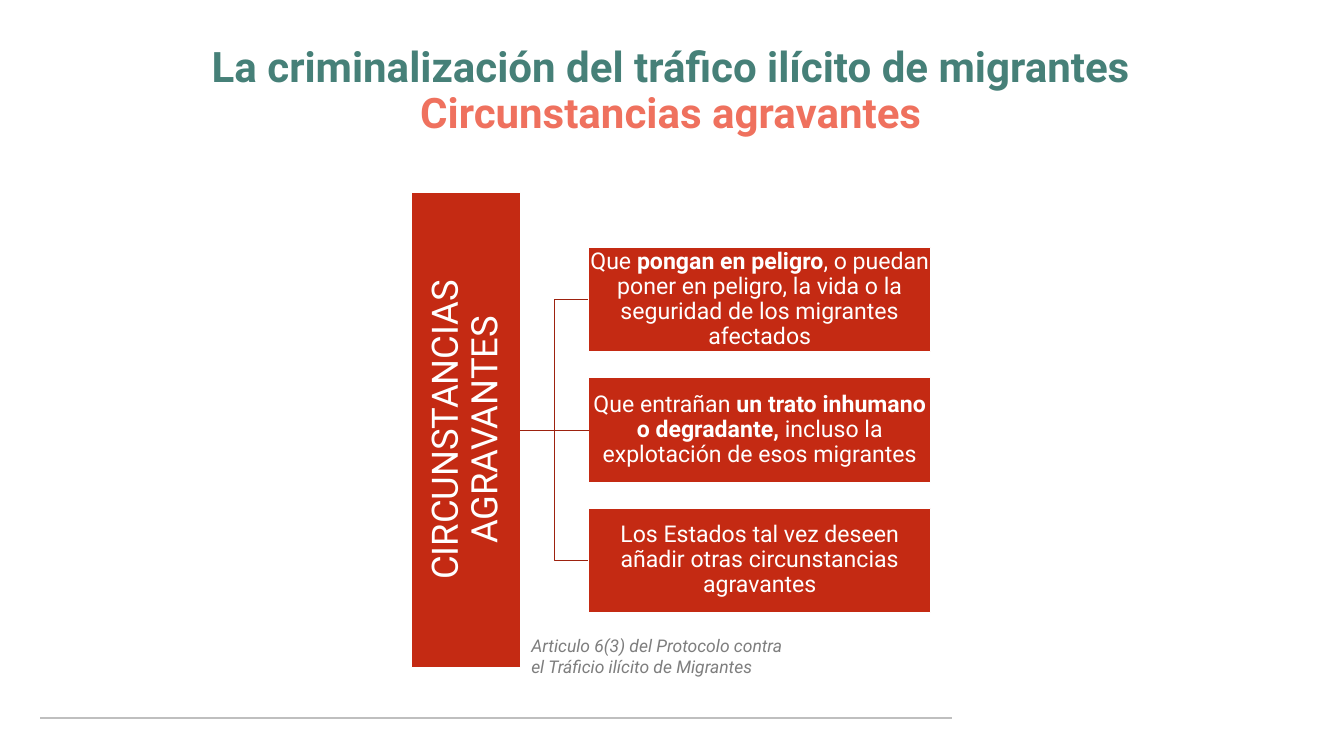
from pptx import Presentation
from pptx.dml.color import RGBColor
from pptx.enum.shapes import MSO_CONNECTOR as Connector, MSO_SHAPE as Shape
from pptx.enum.text import MSO_ANCHOR as Anchor, MSO_AUTO_SIZE as AutoSize, PP_ALIGN as Align
from pptx.oxml.ns import qn
from pptx.util import Inches, Pt
from lxml import etree

FONT = "Roboto"
RED, DARK_RED, WHITE = "C42A13", "9D220F", "FFFFFF"
GREEN, CORAL, GREY, RULE_GREY = "468078", "EF715E", "7E7E7E", "BFBFBF"

# Each circumstance is a list of (text, bold) spans
CIRCUMSTANCES = [
    [("Que ", False), ("pongan en peligro", True),
     (", o puedan poner en peligro, la vida o la seguridad de los migrantes afectados", False)],
    [("Que entrañan ", False), ("un trato inhumano o degradante,", True),
     (" incluso la explotación de esos migrantes", False)],
    [("Los Estados tal vez deseen añadir otras circunstancias agravantes", False)],
]


def color(value):
    return RGBColor.from_string(value)


def style_line(line, value, width):
    line.color.rgb = color(value)
    line.width = Pt(width)


def set_frame(frame, inset_x, inset_y, anchor):
    frame.word_wrap = True
    frame.margin_left = frame.margin_right = Inches(inset_x)
    frame.margin_top = frame.margin_bottom = Inches(inset_y)
    frame.vertical_anchor = anchor


def set_font(font, size, value=None):
    font.name = FONT
    font.size = Pt(size)
    if value:
        font.color.rgb = color(value)


def add_line(page, x1, y1, x2, y2, value, width):
    line = page.shapes.add_connector(
        Connector.STRAIGHT, Inches(x1), Inches(y1), Inches(x2), Inches(y2))
    style_line(line.line, value, width)
    etree.SubElement(line._element.spPr, qn("a:effectLst"))
    return line


def add_title(page, left, top, width, height):
    box = page.shapes.add_textbox(Inches(left), Inches(top), Inches(width), Inches(height))
    set_frame(box.text_frame, 0.2, 0.1, Anchor.MIDDLE)
    para = box.text_frame.paragraphs[0]
    para.alignment = Align.CENTER
    para.line_spacing = 0.9
    set_font(para.font, 60)
    para.font.bold = True
    lines = [("La criminalización del tráfico ilícito de migrantes", GREEN),
             ("Circunstancias agravantes", CORAL)]
    for index, (text, value) in enumerate(lines):
        if index:
            para.add_line_break()
        span = para.add_run()
        span.text = text
        span.font.color.rgb = color(value)


def add_red_box(page, left, top, width, height, spans, size, inset):
    box = page.shapes.add_shape(
        Shape.RECTANGLE, Inches(left), Inches(top), Inches(width), Inches(height))
    box.shadow.inherit = False
    box.fill.solid()
    box.fill.fore_color.rgb = color(RED)
    style_line(box.line, WHITE, 1)
    set_frame(box.text_frame, inset, inset, Anchor.MIDDLE)
    para = box.text_frame.paragraphs[0]
    para.alignment = Align.CENTER
    para.line_spacing = 0.9
    set_font(para.font, size, WHITE)
    for text, bold in spans:
        span = para.add_run()
        span.text = text
        span.font.bold = bold
    return box


def add_elbow(page, x1, y1, x2, y2):
    middle = (x1 + x2) / 2
    builder = page.shapes.build_freeform(Inches(x1), Inches(y1))
    points = [(middle, y1), (middle, y2), (x2, y2)]
    builder.add_line_segments([(Inches(x), Inches(y)) for x, y in points], close=False)
    elbow = builder.convert_to_shape()
    elbow.shadow.inherit = False
    elbow.fill.background()
    style_line(elbow.line, DARK_RED, 1)


def add_hierarchy(page, left, top, width, height):
    root_width, child_width, child_height, pitch = 2.16, 6.78, 2.07, 2.585
    root_right, child_left = left + root_width, left + width - child_width
    center_y = top + height / 2
    centers = [center_y + (index - 1) * pitch for index in range(len(CIRCUMSTANCES))]

    # Branches to the outer children
    for y in (centers[0], centers[-1]):
        add_elbow(page, root_right, center_y, child_left, y)

    # Root, turned to read upwards
    root = add_red_box(page, left + (root_width - height) / 2, center_y - root_width / 2,
                       height, root_width, [("CIRCUNSTANCIAS AGRAVANTES", False)], 52, 0.04)
    root.rotation = 270

    # Children
    children = [add_red_box(page, child_left, y - child_height / 2, child_width,
                            child_height, spans, 33, 0.02)
                for y, spans in zip(centers, CIRCUMSTANCES)]

    # Straight branch: the turned root's bottom side faces right
    branch = add_line(page, root_right, center_y, child_left, center_y, DARK_RED, 1)
    branch.begin_connect(root, 2)
    branch.end_connect(children[1], 1)
    branch.begin_x, branch.begin_y = Inches(root_right), Inches(center_y)
    branch.end_x, branch.end_y = Inches(child_left), Inches(center_y)


def add_source_note(page, left, top, width, height):
    box = page.shapes.add_textbox(Inches(left), Inches(top), Inches(width), Inches(height))
    set_frame(box.text_frame, 0.1, 0.05, Anchor.TOP)
    box.text_frame.auto_size = AutoSize.SHAPE_TO_FIT_TEXT
    para = box.text_frame.paragraphs[0]
    para.text = "Articulo 6(3) del Protocolo contra el Tráficio ilícito de Migrantes"
    set_font(para.font, 25, GREY)
    para.font.italic = True


def main():
    deck = Presentation()
    deck.slide_width, deck.slide_height = Inches(26.66), Inches(15)
    page = deck.slides.add_slide(deck.slide_layouts[6])
    add_line(page, 0.8, 14.25, 18.88, 14.25, RULE_GREY, 2.25)  # footer rule
    add_title(page, 0.8, 0.55, 25.01, 2.54)
    add_hierarchy(page, 8.16, 3.82, 10.3, 9.42)
    add_source_note(page, 10.44, 12.55, 5.24, 0.94)
    deck.save("out.pptx")


if __name__ == "__main__":
    main()
